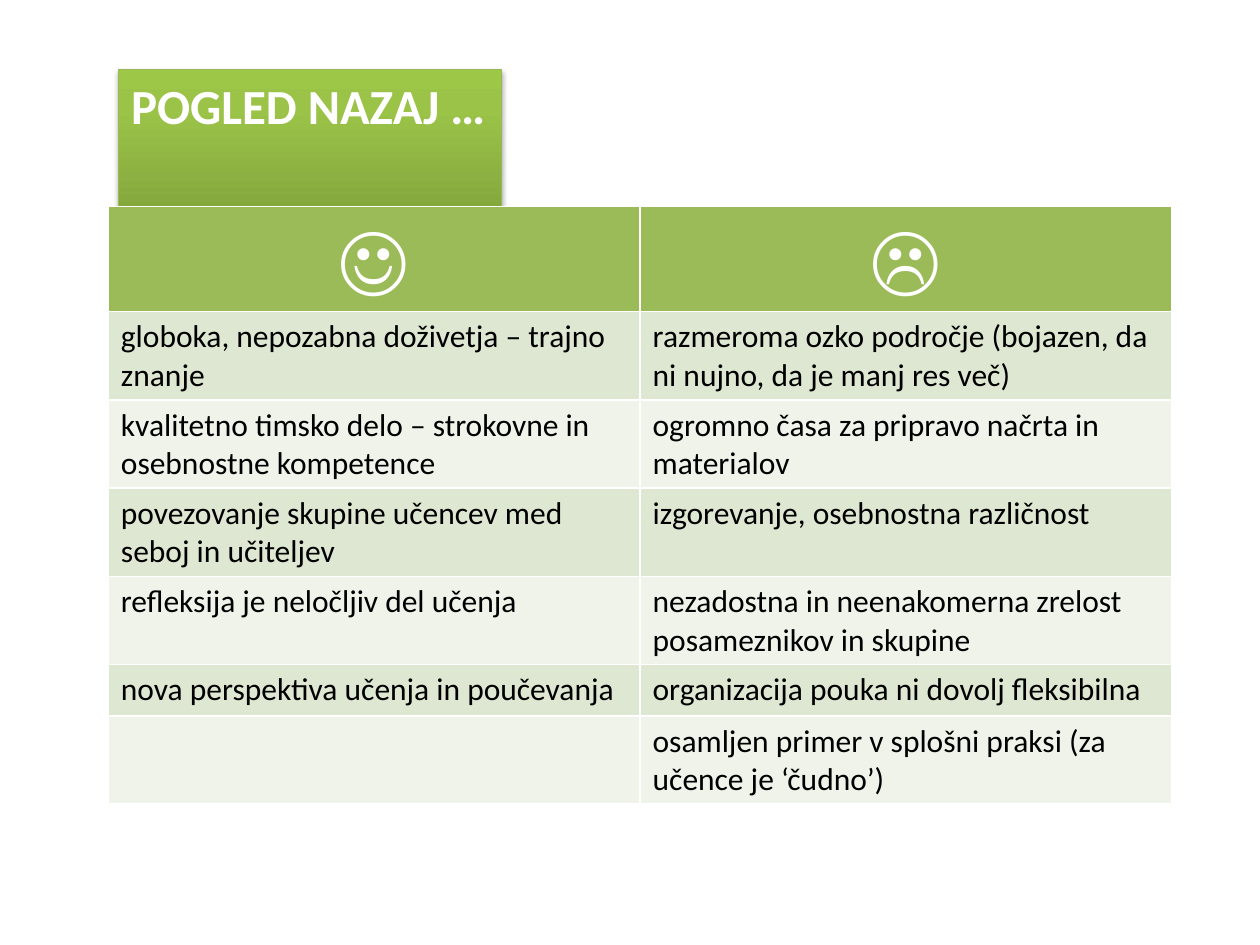
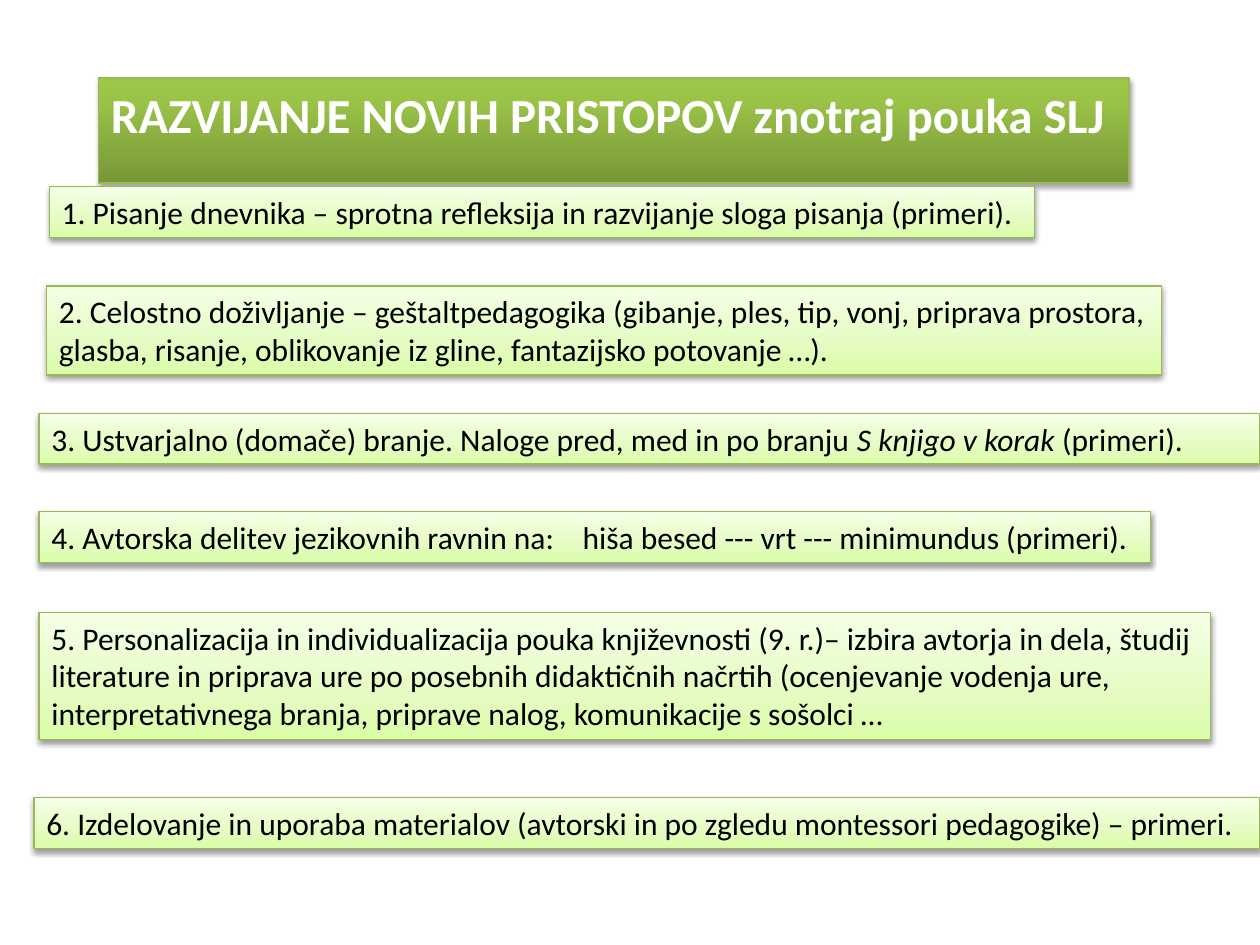
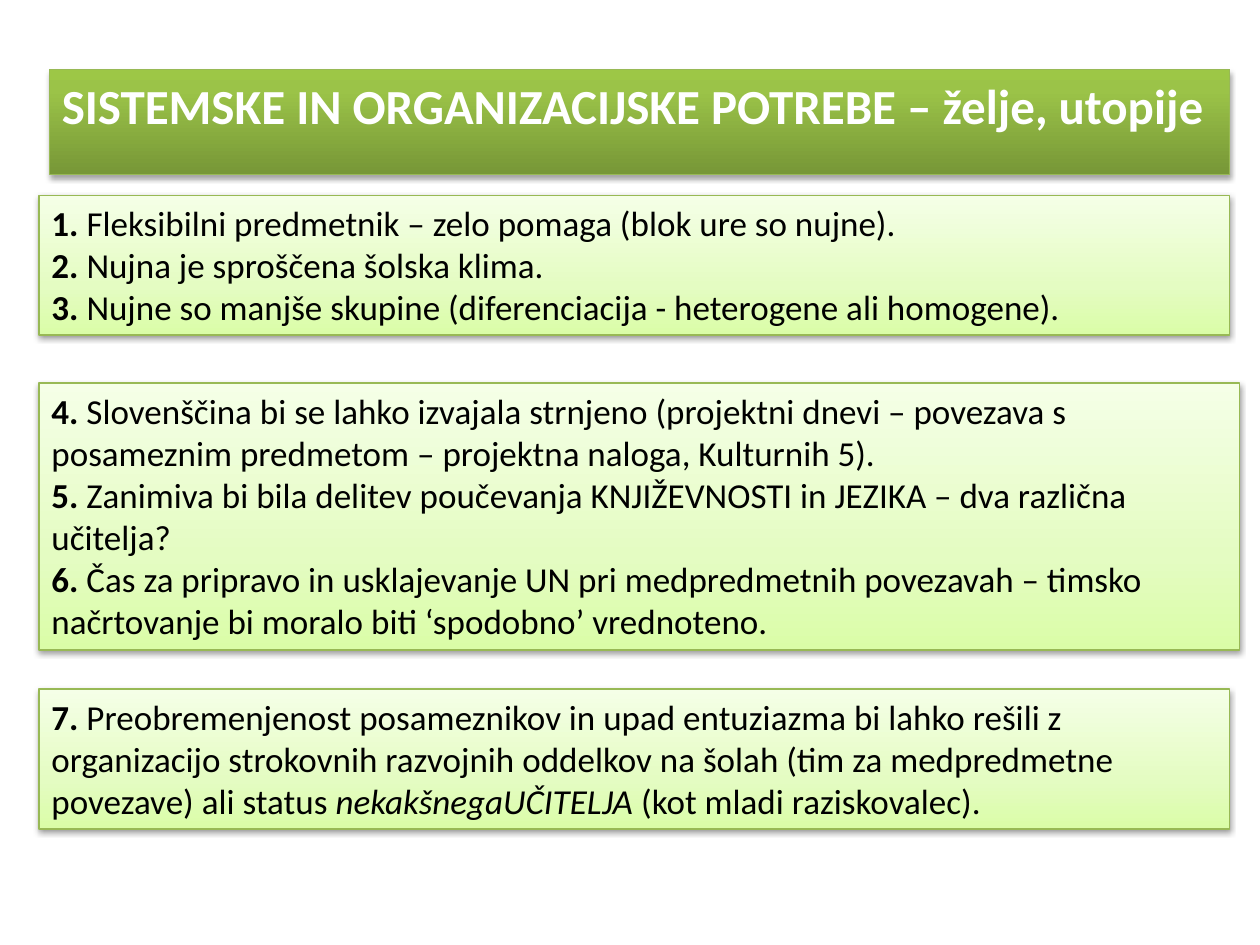
import pptx
import pptx.dml.color
import pptx.enum.shapes
import pptx.enum.text
import pptx.oxml
import pptx.oxml.ns
import pptx.util

Pt = pptx.util.Pt
qn = pptx.oxml.ns.qn
PP_ALIGN = pptx.enum.text.PP_ALIGN

COLORS = {
    "white": "FFFFFF", "black": "000000", "outline": "98B955",
    "header": "9BBB59", "band_dark": "DEE7D1", "band_light": "EFF3EA",
}
TITLE_LOOK = {
    "stops": [(0, "779737"), (80, "9BC348"), (100, "9DC746")],
    "shadow": {"alpha": 35, "distance": 1.8},
}
NOTE_LOOK = {
    "stops": [(0, "DAFDA7"), (35, "E4FCC2"), (100, "F5FFE7")],
    "shadow": {"alpha": 38, "distance": 1.6},
}
TITLE_FONT = {"name": "Calibri", "size": Pt(28), "bold": True}
NOTE_FONT = {"name": "Calibri", "size": Pt(18), "bold": False}
WISH_FONT = {"name": "Calibri", "size": Pt(20), "bold": False}
SMILEY_FONT = {"name": "Calibri", "size": Pt(44), "bold": True}
BOLD = {"bold": True}
ITALIC = {"italic": True}

# Wording and places of the three slides
REVIEW_ROWS = [
    ("☺", "☹"),
    ("globoka, nepozabna doživetja – trajno znanje",
     "razmeroma ozko področje (bojazen, da ni nujno, da je manj res več)"),
    ("kvalitetno timsko delo – strokovne in osebnostne kompetence",
     "ogromno časa za pripravo načrta in materialov"),
    ("povezovanje skupine učencev med seboj in učiteljev",
     "izgorevanje, osebnostna različnost"),
    ("refleksija je neločljiv del učenja",
     "nezadostna in neenakomerna zrelost posameznikov in skupine"),
    ("nova perspektiva učenja in poučevanja",
     "organizacija pouka ni dovolj fleksibilna"),
    ("", "osamljen primer v splošni praksi (za učence je ‘čudno’)"),
]
REVIEW_HEIGHTS = [60, 50.4, 50.4, 50.4, 50.4, 29.2, 50.4]

# Each note: box, wrapping, paragraphs made of (text, format) spans
APPROACHES = [
    ((28.1, 106.6, 563, 29), False,
     [[("1. Pisanje dnevnika – sprotna refleksija in razvijanje sloga pisanja (primeri).", {})]]),
    ((26.6, 163.4, 637.2, 51), True,
     [[("2. Celostno doživljanje – geštaltpedagogika (gibanje, ples, tip, vonj, priprava prostora, "
        "glasba, risanje, oblikovanje iz gline, fantazijsko potovanje …).", {})]]),
    ((22.3, 236.2, 697.7, 29), True,
     [[("3. Ustvarjalno (domače) branje. Naloge pred, med in po branju ", {}),
       ("S knjigo v korak ", ITALIC), ("(primeri).", {})]]),
    ((22.3, 292.3, 635, 29), False,
     [[("4. Avtorska delitev jezikovnih ravnin na:\thiša besed --- vrt --- minimundus (primeri).", {})]]),
    ((22.3, 349.9, 669.6, 72.7), True,
     [[("5. Personalizacija in individualizacija pouka književnosti (9. r.)– izbira avtorja in dela, "
        "študij literature in priprava ure po posebnih didaktičnih načrtih (ocenjevanje vodenja ure, "
        "interpretativnega branja, priprave nalog, komunikacije s sošolci …", {})]]),
    ((19.4, 455.8, 700.6, 29), False,
     [[("6. Izdelovanje in uporaba materialov (avtorski in po zgledu montessori pedagogike) – primeri.", {})]]),
]
WISHES = [
    ((22.3, 111.6, 680.4, 79.9), True,
     [[("1. ", BOLD), ("Fleksibilni predmetnik – zelo pomaga (blok ure so nujne).", {})],
      [("2. ", BOLD), ("Nujna je sproščena šolska klima.", {})],
      [("3. ", BOLD), ("Nujne so manjše skupine (diferenciacija - heterogene ali homogene).", {})]]),
    ((22.3, 218.9, 686.2, 152.6), True,
     [[("4. ", BOLD), ("Slovenščina bi se lahko izvajala strnjeno (projektni dnevi – povezava s "
                       "posameznim predmetom – projektna naloga, Kulturnih 5).", {})],
      [("5. ", BOLD), ("Zanimiva bi bila delitev poučevanja KNJIŽEVNOSTI in JEZIKA – dva različna "
                       "učitelja?", {})],
      [("6. ", BOLD), ("Čas za pripravo in usklajevanje UN pri medpredmetnih povezavah – timsko "
                       "načrtovanje bi moralo biti ‘spodobno’ vrednoteno.", {})]]),
    ((22.3, 393.8, 680.4, 79.9), True,
     [[("7.", BOLD), (" Preobremenjenost posameznikov in upad entuziazma bi lahko rešili z "
                      "organizacijo strokovnih razvojnih oddelkov na šolah (tim za medpredmetne "
                      "povezave) ali status ", {}),
       ("nekakšnegaUČITELJA ", ITALIC), ("(kot mladi raziskovalec).", {})]]),
]


def rgb(name):
    return pptx.dml.color.RGBColor.from_string(COLORS[name])


def set_values(target, values):
    for name, value in values.items():
        setattr(target, name, value)


def write_spans(para, spans, font, color, align=PP_ALIGN.LEFT):
    para.alignment = align
    for text, extra in spans:
        span = para.add_run()
        span.text = text
        set_values(span.font, {**font, **extra})
        span.font.color.rgb = rgb(color)


def add_xml(parent, tag, **attributes):
    child = pptx.oxml.ns.qn(tag)
    element = parent.makeelement(child, {key: str(value) for key, value in attributes.items()})
    parent.append(element)
    return element


def style_panel(shape, look):
    """Gradient rising from the bottom, green outline and soft shadow."""
    shape.fill.gradient()
    shape.fill.gradient_angle = 90
    shape.line.color.rgb = rgb("outline")
    shape.line.width = Pt(0.75)
    shape.shadow.inherit = False
    properties = shape._element.spPr
    stop_list = properties.find(".//" + qn("a:gsLst"))
    for stop in list(stop_list):
        stop_list.remove(stop)
    for position, color in look["stops"]:
        stop = add_xml(stop_list, "a:gs", pos=position * 1000)
        add_xml(stop, "a:srgbClr", val=color)
    shadow = add_xml(properties.find(qn("a:effectLst")), "a:outerShdw",
                     blurRad=Pt(3.1), dist=Pt(look["shadow"]["distance"]),
                     dir=90 * 60000, rotWithShape=0)
    tint = add_xml(shadow, "a:srgbClr", val=COLORS["black"])
    add_xml(tint, "a:alpha", val=look["shadow"]["alpha"] * 1000)


def fill_panel(shape, box, look, wrap, paragraphs, font, color):
    set_values(shape, dict(zip(("left", "top", "width", "height"), map(Pt, box))))
    style_panel(shape, look)
    frame = shape.text_frame
    set_values(frame, {
        "word_wrap": wrap,
        "auto_size": pptx.enum.text.MSO_AUTO_SIZE.SHAPE_TO_FIT_TEXT,
        "vertical_anchor": pptx.enum.text.MSO_ANCHOR.TOP,
    })
    for index, spans in enumerate(paragraphs):
        para = frame.add_paragraph() if index else frame.paragraphs[0]
        write_spans(para, spans, font, color)
    return frame


def add_page(deck, title, box):
    page = deck.slides.add_slide(deck.slide_layouts[5])
    fill_panel(page.shapes.title, box, TITLE_LOOK, False, [[(title, {})]], TITLE_FONT, "white")
    return page


def add_notes(page, notes, font):
    frames = []
    for box, wrap, paragraphs in notes:
        shape = page.shapes.add_shape(pptx.enum.shapes.MSO_SHAPE.RECTANGLE, *map(Pt, box))
        frames.append(fill_panel(shape, box, NOTE_LOOK, wrap, paragraphs, font, "black"))
    return frames


def add_review_table(page, box):
    table = page.shapes.add_table(len(REVIEW_ROWS), 2, *map(Pt, box)).table
    for row_index, texts in enumerate(REVIEW_ROWS):
        table.rows[row_index].height = Pt(REVIEW_HEIGHTS[row_index])
        if row_index == 0:
            fill, style = "header", (SMILEY_FONT, "white", PP_ALIGN.CENTER)
        else:
            fill = "band_dark" if row_index % 2 else "band_light"
            style = (NOTE_FONT, "black", PP_ALIGN.LEFT)
        for column_index, text in enumerate(texts):
            cell = table.cell(row_index, column_index)
            cell.fill.solid()
            cell.fill.fore_color.rgb = rgb(fill)
            if text:
                write_spans(cell.text_frame.paragraphs[0], [(text, {})], *style)


def build_review(deck):
    page = add_page(deck, "POGLED NAZAJ …", (67.7, 39.6, 218.9, 41))
    add_review_table(page, (61.9, 118.1, 607.7, 341.2))


def build_approaches(deck):
    page = add_page(deck, "RAZVIJANJE NOVIH PRISTOPOV znotraj pouka SLJ", (56.2, 44.6, 589, 41))
    frames = add_notes(page, APPROACHES, NOTE_FONT)
    # Tab stop that sets off the three language areas in the fourth note
    tabs = add_xml(frames[3].paragraphs[0]._p.get_or_add_pPr(), "a:tabLst")
    add_xml(tabs, "a:tab", pos=Pt(303.5), algn="l")


def build_wishes(deck):
    page = add_page(deck, "SISTEMSKE IN ORGANIZACIJSKE POTREBE – želje, utopije", (28.1, 39.6, 674.6, 41))
    frames = add_notes(page, WISHES, WISH_FONT)
    # Hanging indent of the first two wishes
    for para in frames[0].paragraphs[:2]:
        properties = para._p.get_or_add_pPr()
        properties.set("marL", str(Pt(27)))
        properties.set("indent", str(-Pt(27)))


def main():
    deck = pptx.Presentation()
    set_values(deck, {"slide_width": Pt(720), "slide_height": Pt(540)})
    for build in (build_review, build_approaches, build_wishes):
        build(deck)
    deck.save("out.pptx")


if __name__ == "__main__":
    main()
